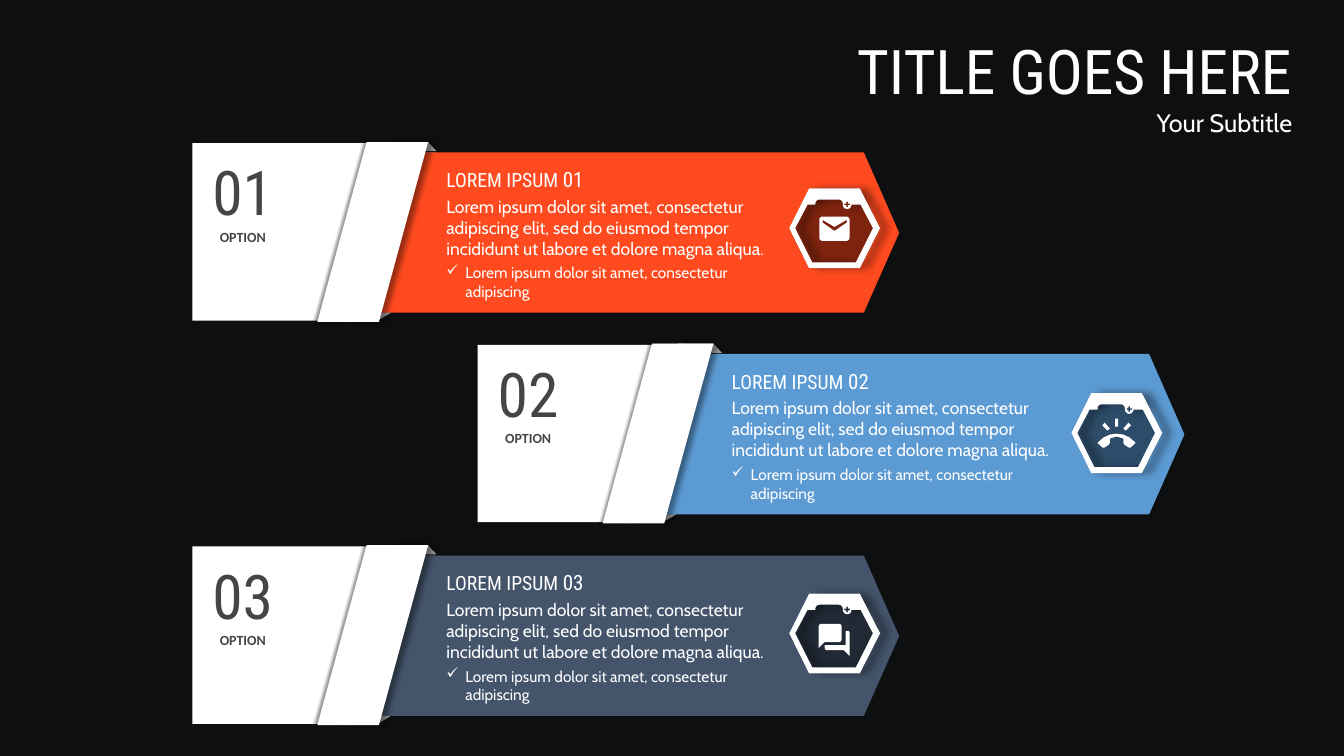
"""Build a dark slide with three banner options, each with a number card and an icon badge."""
from math import cos, radians, sin

from lxml.etree import SubElement
from pptx import Presentation
from pptx.dml.color import RGBColor
from pptx.enum.shapes import MSO_SHAPE
from pptx.enum.text import MSO_ANCHOR, MSO_AUTO_SIZE, PP_ALIGN
from pptx.oxml.ns import qn
from pptx.util import Cm, Pt

BACKDROP = RGBColor(0x0E, 0x0F, 0x11)
WHITE = RGBColor(0xFF, 0xFF, 0xFF)
BLACK = RGBColor(0x00, 0x00, 0x00)
FOLD_GREY = RGBColor(0xA6, 0xA6, 0xA6)
NUMBER_GREY = RGBColor(0x45, 0x45, 0x45)
ORANGE = RGBColor(0xFE, 0x4A, 0x1E)
BLUE = RGBColor(0x5C, 0x9A, 0xD3)
SLATE = RGBColor(0x44, 0x54, 0x6B)

TITLE = {"name": "Roboto Condensed", "size": Pt(44), "color": WHITE}
SUBTITLE = {"name": "Cabin", "size": Pt(18), "color": WHITE}
HEADING = {"name": "Roboto Condensed", "size": Pt(14), "color": WHITE}
HEADING_NUMBER = HEADING | {"size": Pt(15)}
BODY = {"name": "Cabin", "size": Pt(12.5), "color": WHITE}
BULLET = BODY | {"size": Pt(11)}
NUMBER = {"name": "Roboto Condensed", "size": Pt(44), "color": NUMBER_GREY}
CAPTION = {"name": "Calibri", "size": Pt(10), "bold": True, "color": NUMBER_GREY}

BODY_TEXT = ("Lorem ipsum dolor sit amet, consectetur adipiscing elit, sed do eiusmod "
             "tempor incididunt ut labore et dolore magna aliqua.")
BULLET_TEXT = "Lorem ipsum dolor sit amet, consectetur adipiscing"

FOLDS = [
    [(6.12, 0.23), (5, 4.27), (3.63, 4.27), (4.75, 0.23)],
    [(4.42, -0.03), (5.94, -0.03), (6.15, 0.2), (4.6, 0.2)],
    [(3.51, 4.27), (5, 4.27), (4.67, 4.47), (3.2, 4.47)],
]
BANNER = [(5.05, 0.23), (16.92, 0.23), (17.81, 2.26), (16.92, 4.27), (3.94, 4.27)]
CARD = [(0, 0), (5, 0), (3.94, 4.47), (0, 4.47)]
STRIP_LEFT = [(5.94, -0.03), (5.94, 0), (5.05, 0), (3.81, 4.5), (3.15, 4.5), (4.39, -0.03)]
STRIP_RIGHT = [(5.94, -0.03), (4.7, 4.5), (3.81, 4.5), (5.05, -0.03)]


def arc(x, y, radius, start, end, steps=6):
    """Return points along a circular arc, with angles in degrees."""
    angles = [radians(start + (end - start) * step / steps) for step in range(steps + 1)]
    return [(x + radius * cos(angle), y + radius * sin(angle)) for angle in angles]


def rounded(left, top, right, bottom, radius):
    """Return the outline of a rectangle with round corners."""
    return (arc(right - radius, top + radius, radius, -90, 0)
            + arc(right - radius, bottom - radius, radius, 0, 90)
            + arc(left + radius, bottom - radius, radius, 90, 180)
            + arc(left + radius, top + radius, radius, 180, 270))


def mirror(points, axis=1.14):
    """Return the points reflected in a vertical axis, in reverse order."""
    return [(2 * axis - x, y) for x, y in reversed(points)]


def plus(x, y, reach, half):
    """Return the outline of a plus sign."""
    quarter = [(half, reach), (half, half), (reach, half)]
    right = quarter + [(a, -b) for a, b in reversed(quarter)]
    return [(x + a, y + b) for a, b in right + [(-a, -b) for a, b in right]]


FRAME = [
    [(0.5, 0), (1.78, 0), (2.29, 1), (1.78, 2.01), (0.5, 2.01), (0, 1)],
    [(0.46, 0.41), (0.15, 1), (0.58, 1.86), (1.68, 1.86), (2.11, 1), (1.8, 0.41)]
    + arc(1.46, 0.41, 0.11, 0, 180)
    + arc(1.25, 0.38, 0.1, 0, -90) + arc(0.76, 0.38, 0.1, -90, -180) + [(0.66, 0.41)],
    plus(1.46, 0.4, 0.07, 0.02),
]
MAIL = [
    rounded(0.76, 0.71, 1.52, 1.32, 0.08),
    [(1.45, 0.86), (1.14, 1.07), (0.84, 0.86), (0.84, 0.79), (1.14, 0.97), (1.45, 0.79)],
]
HANDSET = [(1.14, 1.02), (0.98, 1.04), (0.82, 1.11), (0.69, 1.22), (0.66, 1.25), (0.69, 1.28),
           (0.79, 1.37), (0.83, 1.37), (0.94, 1.3), (0.97, 1.25), (0.97, 1.14), (1.14, 1.09)]
RAY = [(0.91, 0.94), (0.97, 0.89), (0.84, 0.74), (0.78, 0.81)]
PHONE = [HANDSET + mirror(HANDSET), RAY, mirror(RAY),
         [(1.1, 0.64), (1.18, 0.64), (1.18, 0.84), (1.1, 0.84)]]
CHAT = [
    [(1.5, 0.94), (1.42, 0.94), (1.42, 1.3), (0.89, 1.3), (0.89, 1.37), (0.92, 1.42),
     (1.37, 1.42), (1.52, 1.57), (1.52, 0.97)],
    [(1.32, 1.17), (1.32, 0.81), (1.28, 0.76), (0.78, 0.76), (0.74, 0.81), (0.74, 1.37),
     (0.89, 1.22), (1.28, 1.22)],
]

OPTIONS = [
    ("01", 4.85, 3.61, ORANGE, MAIL, (15.04, 1.14)),
    ("02", 12.04, 8.69, BLUE, PHONE, (14.96, 1.22)),
    ("03", 4.85, 13.77, SLATE, CHAT, (15.04, 1.19)),
]


def paint(shape, color):
    """Give a shape a plain fill, with no line and no shadow."""
    shape.fill.solid()
    shape.fill.fore_color.rgb = color
    shape.line.fill.background()
    shape.shadow.inherit = False


def add_alpha(color_element, percent):
    """Make a colour partly transparent."""
    SubElement(color_element, qn("a:alpha"), val=str(percent * 1000))


def cast_shadow(shape, blur, distance, degrees):
    """Add a soft black outer shadow."""
    effects = shape._element.spPr.find(qn("a:effectLst"))
    shadow = SubElement(effects, qn("a:outerShdw"), blurRad=str(Pt(blur)), dist=str(Pt(distance)),
                        dir=str(degrees * 60000), algn="ctr", rotWithShape="0")
    add_alpha(SubElement(shadow, qn("a:srgbClr"), val=str(BLACK)), 40)


def add_outline(group, contours, left, top, color):
    """Draw one or more closed contours, offset in centimetres, as one shape."""
    moved = [[(Cm(left + x), Cm(top + y)) for x, y in contour] for contour in contours]
    builder = group.shapes.build_freeform(*moved[0][0])
    builder.add_line_segments(moved[0][1:])
    for contour in moved[1:]:
        builder.move_to(*contour[0])
        builder.add_line_segments(contour[1:])
    shape = builder.convert_to_shape()
    paint(shape, color)
    return shape


def add_span(para, text, style):
    """Add a run and format it."""
    span = para.add_run()
    span.text = text
    for key, value in style.items():
        if key == "color":
            span.font.color.rgb = value
        else:
            setattr(span.font, key, value)


def add_box(group, left, top, width, height):
    """Add a wrapping text box and return its frame."""
    frame = group.shapes.add_textbox(Cm(left), Cm(top), Cm(width), Cm(height)).text_frame
    frame.word_wrap = True
    return frame


def add_description(group, left, top, number):
    """Add the heading, body and check-marked line of a banner."""
    frame = add_box(group, left, top, 9.02, 3.68)
    heading = frame.paragraphs[0]
    add_span(heading, "LOREM IPSUM ", HEADING)
    add_span(heading, number, HEADING_NUMBER)
    body = frame.add_paragraph()
    body.space_before = Pt(2.8)
    add_span(body, BODY_TEXT, BODY)
    check = frame.add_paragraph()
    check.space_before = Pt(3.6)
    properties = check._p.get_or_add_pPr()
    properties.set("marL", str(Cm(0.48)))
    properties.set("indent", str(-Cm(0.48)))
    SubElement(properties, qn("a:buChar"), char="✓")
    add_span(check, BULLET_TEXT, BULLET)


def add_badge(group, left, top, icon):
    """Add a translucent hexagon with its white frame and icon."""
    hexagon = group.shapes.add_shape(MSO_SHAPE.HEXAGON, Cm(left), Cm(top), Cm(2.29), Cm(2.01))
    paint(hexagon, BLACK)
    add_alpha(hexagon._element.spPr.find(qn("a:solidFill"))[0], 50)
    cast_shadow(add_outline(group, FRAME, left, top, WHITE), 6, 6, 0)
    add_outline(group, icon, left, top, WHITE)


def add_card(group, left, top, number):
    """Add the white number card with its folded strip."""
    add_outline(group, [CARD], left, top, WHITE)
    cast_shadow(add_outline(group, [STRIP_LEFT], left, top, WHITE), 2, 2, 180)
    cast_shadow(add_outline(group, [STRIP_RIGHT], left, top, WHITE), 4, 4, 0)
    frame = add_box(group, left + 0.32, top + 0.2, 1.9, 2.49)
    margins = {"margin_left": 0.18, "margin_right": 0.18, "margin_top": 0.08, "margin_bottom": 0.08}
    for key, value in margins.items():
        setattr(frame, key, Cm(value))
    for para, text, style in ((frame.paragraphs[0], number, NUMBER),
                              (frame.add_paragraph(), "OPTION", CAPTION)):
        para.alignment = PP_ALIGN.CENTER
        add_span(para, text, style)


def add_option(page, number, left, top, color, icon, badge):
    """Add one complete option as a group."""
    group = page.shapes.add_group_shape()
    for fold in FOLDS:
        add_outline(group, [fold], left, top, FOLD_GREY)
    add_outline(group, [BANNER], left, top, color)
    add_description(group, left + 6.15, top + 0.46, number)
    add_badge(group, left + badge[0], top + badge[1], icon)
    add_card(group, left, top, number)


def add_title(page):
    """Place the title and subtitle at the top right."""
    title = page.shapes.title
    for key, value in {"left": 20.73, "top": 0.71, "width": 12.09, "height": 2.9}.items():
        setattr(title, key, Cm(value))
    frame = title.text_frame
    frame.auto_size = MSO_AUTO_SIZE.NONE
    frame.vertical_anchor = MSO_ANCHOR.TOP
    for para, text, style in ((frame.paragraphs[0], "TITLE GOES HERE", TITLE),
                              (frame.add_paragraph(), "Your Subtitle", SUBTITLE)):
        para.alignment = PP_ALIGN.RIGHT
        add_span(para, text, style)


def main():
    """Build and save the deck."""
    deck = Presentation()
    deck.slide_width, deck.slide_height = Cm(33.87), Cm(19.05)
    page = deck.slides.add_slide(deck.slide_layouts[5])
    page.background.fill.solid()
    page.background.fill.fore_color.rgb = BACKDROP
    add_title(page)
    for option in OPTIONS:
        add_option(page, *option)
    deck.save("out.pptx")


if __name__ == "__main__":
    main()
